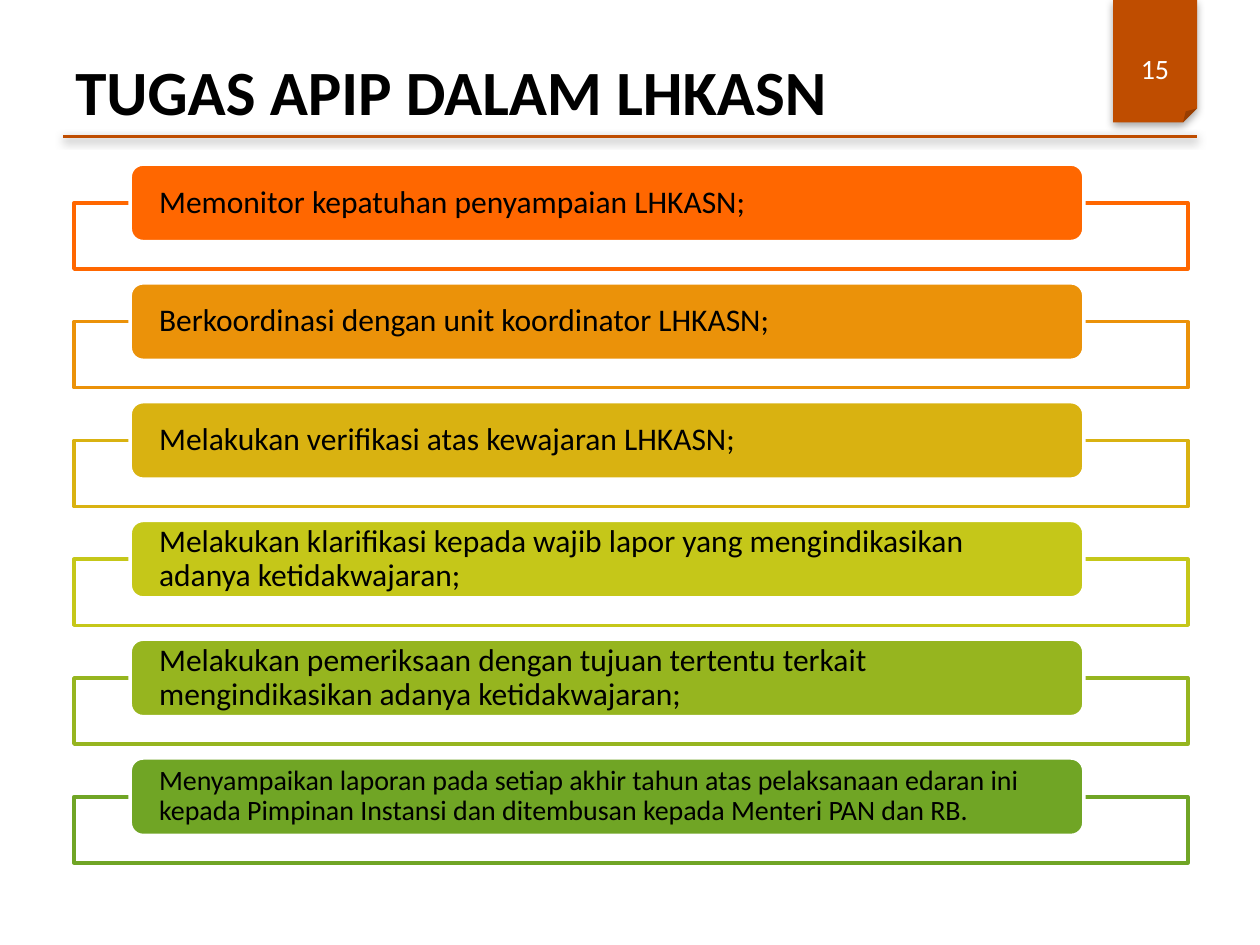
from lxml import etree
from pptx import Presentation
from pptx.dml.color import RGBColor
from pptx.enum import shapes, text
from pptx.oxml.ns import qn
from pptx.util import Pt

FONT = "Calibri"
BLACK = RGBColor(0x00, 0x00, 0x00)
WHITE = RGBColor(0xFF, 0xFF, 0xFF)
RUST = RGBColor(0xBF, 0x4D, 0x00)

TITLE = "TUGAS APIP DALAM LHKASN"
PAGE_NUMBER = "15"
TASKS = [  # wording, colour, text size
    ("Memonitor kepatuhan penyampaian LHKASN;", RGBColor(0xFF, 0x67, 0x00), 18),
    ("Berkoordinasi dengan unit koordinator LHKASN;", RGBColor(0xEB, 0x92, 0x09), 18),
    ("Melakukan verifikasi atas kewajaran LHKASN;", RGBColor(0xD9, 0xB2, 0x11), 18),
    ("Melakukan klarifikasi kepada wajib lapor yang mengindikasikan adanya "
     "ketidakwajaran;", RGBColor(0xC5, 0xC7, 0x19), 18),
    ("Melakukan pemeriksaan dengan tujuan tertentu terkait mengindikasikan adanya "
     "ketidakwajaran;", RGBColor(0x96, 0xB5, 0x1F), 18),
    ("Menyampaikan laporan pada setiap akhir tahun atas pelaksanaan edaran ini kepada "
     "Pimpinan Instansi dan ditembusan kepada Menteri PAN dan RB.",
     RGBColor(0x70, 0xA5, 0x25), 16),
]

TASK_TOP = 93.8
TASK_PITCH = 67.87
PILL_LEFT, PILL_WIDTH, PILL_HEIGHT = 74.4, 545, 44.28
FRAME_LEFT, FRAME_WIDTH, FRAME_HEIGHT = 42.3, 636.5, 37.8
PILL_INSET = 14.4


def add_box(slide, kind, left, top, width, height, fill, line=None):
    shape = slide.shapes.add_shape(kind, Pt(left), Pt(top), Pt(width), Pt(height))
    shape.shadow.inherit = False
    shape.fill.solid()
    shape.fill.fore_color.rgb = fill
    if line is None:
        shape.line.fill.background()
    else:
        shape.line.color.rgb = line
        shape.line.width = Pt(2)
    return shape


def write(shape, wording, size, color, align=text.PP_ALIGN.LEFT, bold=False):
    frame = shape.text_frame
    frame.word_wrap = True
    frame.vertical_anchor = text.MSO_ANCHOR.MIDDLE
    paragraph = frame.paragraphs[0]
    paragraph.text = wording
    paragraph.alignment = align
    font = paragraph.font
    font.name, font.size, font.bold = FONT, Pt(size), bold
    font.color.rgb = color
    return paragraph


def add_text(slide, left, top, width, height, *args, **options):
    box = slide.shapes.add_textbox(Pt(left), Pt(top), Pt(width), Pt(height))
    write(box, *args, **options)


def drop_shadow(shape, blur, distance, opacity):
    """Give the shape a black shadow straight below it."""
    properties = shape._element.spPr
    for old in properties.findall(qn("a:effectLst")):
        properties.remove(old)
    effects = etree.SubElement(properties, qn("a:effectLst"))
    shadow = etree.SubElement(
        effects, qn("a:outerShdw"), blurRad=str(Pt(blur)), dist=str(Pt(distance)),
        dir="5400000", rotWithShape="0")
    color = etree.SubElement(shadow, qn("a:srgbClr"), val=str(BLACK))
    etree.SubElement(color, qn("a:alpha"), val=str(opacity * 1000))


def add_header(slide):
    tab = add_box(slide, shapes.MSO_SHAPE.FOLDED_CORNER, 636, 0, 48, 70, RUST)
    drop_shadow(tab, 5, 1.8, 35)
    rule = slide.shapes.add_connector(
        shapes.MSO_CONNECTOR.STRAIGHT, Pt(36), Pt(78), Pt(684), Pt(78))
    rule.line.color.rgb = RUST
    rule.line.width = Pt(2)
    drop_shadow(rule, 5, 1.6, 38)
    add_text(slide, 36, 21.6, 648, 60, TITLE, 36, BLACK, bold=True)
    add_text(slide, 636, 24, 48, 30, PAGE_NUMBER, 16, WHITE,
             align=text.PP_ALIGN.CENTER)


def add_task(slide, top, wording, color, size):
    frame = add_box(slide, shapes.MSO_SHAPE.RECTANGLE, FRAME_LEFT,
                    top + PILL_HEIGHT / 2, FRAME_WIDTH, FRAME_HEIGHT, WHITE, color)
    fill_color = frame._element.spPr.find(qn("a:solidFill"))[0]
    etree.SubElement(fill_color, qn("a:alpha"), val="90000")

    pill = add_box(slide, shapes.MSO_SHAPE.ROUNDED_RECTANGLE, PILL_LEFT, top,
                   PILL_WIDTH, PILL_HEIGHT, color, WHITE)
    margins = pill.text_frame
    margins.margin_left = margins.margin_right = Pt(PILL_INSET)
    margins.margin_top = margins.margin_bottom = 0
    write(pill, wording, size, BLACK).line_spacing = 0.9


def main():
    presentation = Presentation()
    presentation.slide_width, presentation.slide_height = Pt(720), Pt(540)
    slide = presentation.slides.add_slide(presentation.slide_layouts[6])
    add_header(slide)
    for index, task in enumerate(TASKS):
        add_task(slide, TASK_TOP + index * TASK_PITCH, *task)
    presentation.save("out.pptx")


if __name__ == "__main__":
    main()
